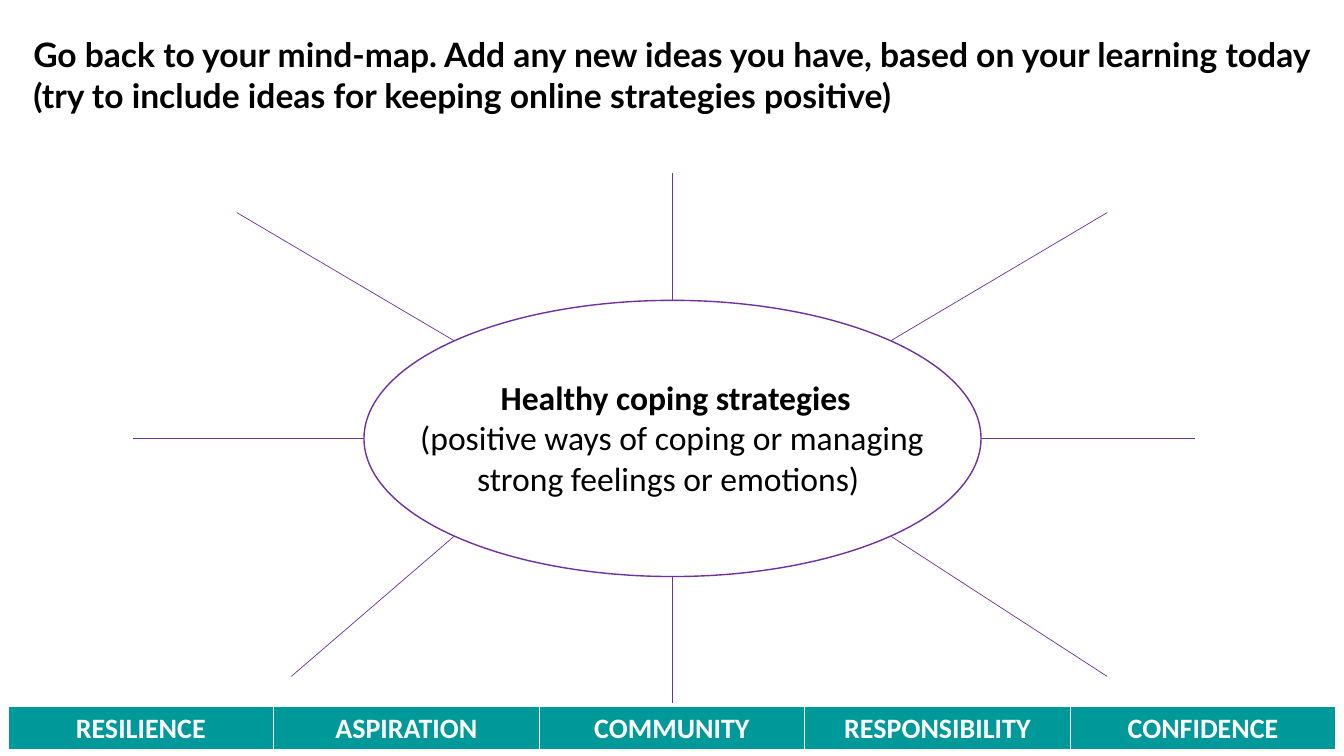
from math import cos, pi, sin

from lxml import etree
from pptx import Presentation
from pptx import util as u
from pptx.dml.color import RGBColor
from pptx.enum import shapes, text
from pptx.oxml.ns import qn

COLORS = {"text": "000000", "branch": "7030A0", "band": "009999", "white": "FFFFFF"}
PROMPT = ("Go back to your mind-map. Add any new ideas you have, based on your learning today "
          "(try to include ideas for keeping online strategies positive)")
TOPIC = [(" Healthy coping strategies", True),
         ("(positive ways of coping or managing strong feelings or emotions) ", False)]
VALUES = ["RESILIENCE", "ASPIRATION", "COMMUNITY", "RESPONSIBILITY", "CONFIDENCE"]
BRANCH_ENDS = [(11.85, 4.35), (10.98, 6.71), (6.67, 6.97), (2.89, 6.71),
               (1.32, 4.35), (2.35, 2.11), (6.67, 1.72), (10.98, 2.11)]
BORDERS = {"a:lnL": 1, "a:lnR": 1, "a:lnT": 1, "a:lnB": 3}
CENTER_X, CENTER_Y = 6.67, 4.35
RADIUS_X, RADIUS_Y = 3.06, 1.37


def rgb(name):
    return RGBColor.from_string(COLORS[name])


def box(left, top, width, height):
    return [u.Inches(n) for n in (left, top, width, height)]


def write(paragraph, words, font="Calibri", size=24, color="text", bold=False,
          align=text.PP_ALIGN.CENTER):
    paragraph.alignment = align
    paragraph.line_spacing = 1.0
    paragraph.space_before = u.Pt(0)
    run = paragraph.add_run()
    run.text = words
    run.font.name = font
    run.font.size = u.Pt(size)
    run.font.bold = bold
    run.font.color.rgb = rgb(color)


def add_border(cell, side, position, width):
    edge = etree.Element(qn(side), w=str(u.Pt(width)))
    fill = etree.SubElement(edge, qn("a:solidFill"))
    etree.SubElement(fill, qn("a:srgbClr"), val=COLORS["white"])
    cell._tc.get_or_add_tcPr().insert(position, edge)


def main():
    deck = Presentation()
    deck.slide_width, deck.slide_height = u.Inches(13.33), u.Inches(7.5)
    slide = deck.slides.add_slide(deck.slide_layouts[5])

    prompt = slide.shapes.title
    prompt.left, prompt.top, prompt.width, prompt.height = box(0.23, 0.29, 12.88, 0.91)
    prompt.text_frame.word_wrap = True
    prompt.text_frame.auto_size = text.MSO_AUTO_SIZE.NONE
    prompt.text_frame.vertical_anchor = text.MSO_ANCHOR.TOP
    write(prompt.text_frame.paragraphs[0], PROMPT, font="Lato", bold=True,
          align=text.PP_ALIGN.LEFT)

    hub = slide.shapes.add_shape(
        shapes.MSO_SHAPE.OVAL,
        *box(CENTER_X - RADIUS_X, CENTER_Y - RADIUS_Y, 2 * RADIUS_X, 2 * RADIUS_Y))
    hub.shadow.inherit = False
    hub.fill.background()
    hub.line.color.rgb = rgb("branch")
    hub.line.width = u.Pt(1)

    topic = slide.shapes.add_textbox(*box(3.93, 3.69, 5.47, 1.31)).text_frame
    topic.word_wrap = True
    for i, (words, bold) in enumerate(TOPIC):
        write(topic.paragraphs[0] if i == 0 else topic.add_paragraph(), words, bold=bold)

    for i, (end_x, end_y) in enumerate(BRANCH_ENDS):
        angle = i * pi / 4
        start_x = CENTER_X + RADIUS_X * cos(angle)
        start_y = CENTER_Y + RADIUS_Y * sin(angle)
        branch = slide.shapes.add_connector(
            shapes.MSO_CONNECTOR.STRAIGHT, *box(start_x, start_y, end_x, end_y))
        branch.line.color.rgb = rgb("branch")
        branch.line.width = u.Pt(0.5)
        etree.SubElement(branch._element.spPr, qn("a:effectLst"))

    band = slide.shapes.add_table(1, len(VALUES), *box(0.08, 7.01, 13.17, 0.44)).table
    for cell, value in zip(band.iter_cells(), VALUES):
        cell.fill.solid()
        cell.fill.fore_color.rgb = rgb("band")
        for position, (side, width) in enumerate(BORDERS.items()):
            add_border(cell, side, position, width)
        write(cell.text_frame.paragraphs[0], value, size=20, color="white", bold=True)

    deck.save("out.pptx")


if __name__ == "__main__":
    main()
